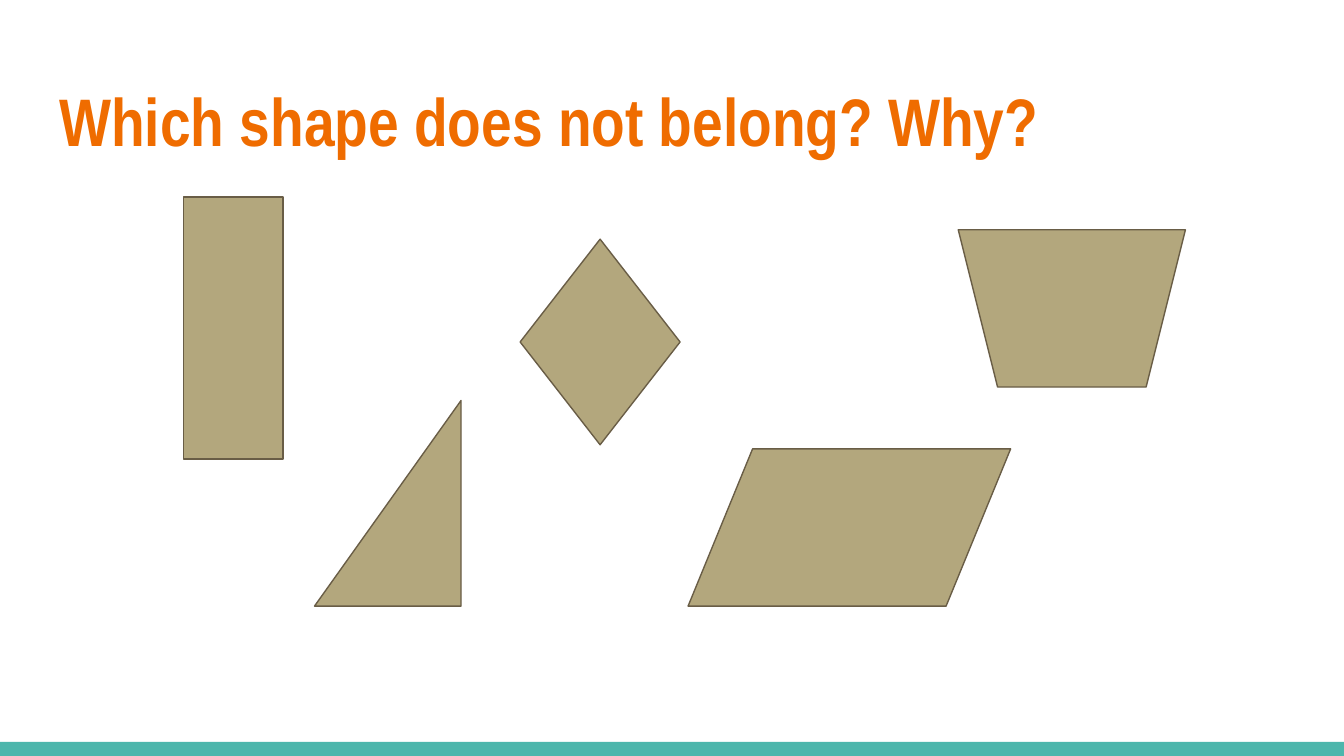
import pptx
import pptx.dml.color
import pptx.enum.shapes
import pptx.enum.text
import pptx.util

Inches = pptx.util.Inches
Pt = pptx.util.Pt
Kind = pptx.enum.shapes.MSO_SHAPE


def color(value):
    return pptx.dml.color.RGBColor.from_string(value)


class PuzzleSlide:
    """Hold the style of the puzzle and the slide it is drawn on."""

    font = "Arial Narrow"
    orange = "EF6C00"
    teal = "4DB6AC"
    tan = "B3A77D"
    brown = "695D46"

    def __init__(self, deck):
        self.slide = deck.slides.add_slide(deck.slide_layouts[5])

    def title(self, wording, left, top, width, height):
        heading = self.slide.shapes.title
        heading.left, heading.top = Inches(left), Inches(top)
        heading.width, heading.height = Inches(width), Inches(height)
        frame = heading.text_frame
        frame.text = wording
        frame.word_wrap = True
        frame.auto_size = pptx.enum.text.MSO_AUTO_SIZE.NONE
        frame.vertical_anchor = pptx.enum.text.MSO_ANCHOR.TOP
        frame.margin_left = frame.margin_right = Inches(0.1)
        frame.margin_top = frame.margin_bottom = Inches(0.1)
        line = frame.paragraphs[0]
        line.alignment = pptx.enum.text.PP_ALIGN.LEFT
        font = line.runs[0].font
        font.name, font.size, font.bold = self.font, Pt(36), True
        font.color.rgb = color(self.orange)

    def block(self, kind, left, top, width, height, fill):
        block = self.slide.shapes.add_shape(
            kind, Inches(left), Inches(top), Inches(width), Inches(height))
        block.shadow.inherit = False
        block.fill.solid()
        block.fill.fore_color.rgb = color(fill)
        block.line.fill.background()
        return block

    def figure(self, kind, left, top, width, height, rotation=0):
        figure = self.block(kind, left, top, width, height, self.tan)
        figure.rotation = rotation
        figure.line.color.rgb = color(self.brown)
        figure.line.width = Pt(0.75)


def main():
    deck = pptx.Presentation()
    deck.slide_width = Inches(10)
    deck.slide_height = deck.slide_width * 9 // 16
    puzzle = PuzzleSlide(deck)
    puzzle.block(Kind.RECTANGLE, 0, 5.52, 10, 0.11, puzzle.teal)
    puzzle.title("Which shape does not belong? Why?", 0.34, 0.49, 9.32, 0.77)
    puzzle.figure(Kind.RECTANGLE, 0.76, 2.07, 1.95, 0.74, 90)
    puzzle.figure(Kind.TRAPEZOID, 7.13, 1.71, 1.69, 1.17, 180)
    puzzle.figure(Kind.RIGHT_TRIANGLE, 2.12, 3.2, 1.53, 1.09, 270)
    puzzle.figure(Kind.FLOWCHART_DATA, 5.12, 3.34, 2.4, 1.17)
    puzzle.figure(Kind.DIAMOND, 3.87, 1.78, 1.19, 1.53)
    deck.save("out.pptx")


if __name__ == "__main__":
    main()
